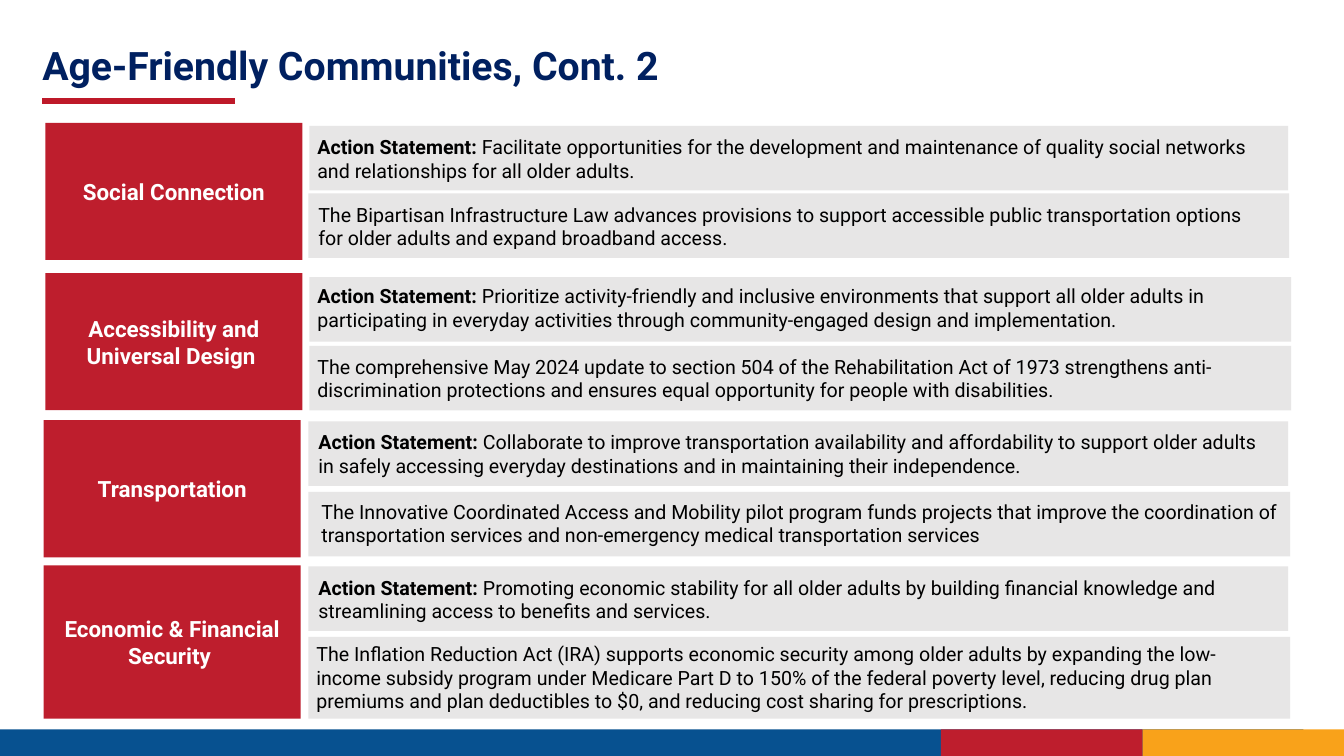
"""Build the Age-Friendly Communities slide of four topics with action statements."""
import pptx
import pptx.dml.color
import pptx.enum.shapes
import pptx.enum.text
import pptx.util
from lxml import etree

Pt = pptx.util.Pt
ALIGN = pptx.enum.text.PP_ALIGN
ANCHOR = pptx.enum.text.MSO_ANCHOR
COLORS = {
    "navy": "002060", "blue": "075190", "red": "BE1E2D", "rule": "BE1929",
    "gold": "F9A21A", "gray": "E7E6E6", "black": "000000", "white": "FFFFFF",
}
ACTION = "Action Statement: "
CARD_WIDTH = 183.6
STRIPES = [("blue", 0, 931), ("gold", 816, 144), ("red", 672, 144)]

# Each topic: label, card (left, top, height), then rows of
# (lead, text, panel box, text box).
TOPICS = [
    ("Social Connection", (32.4, 87.8, 97.9), [
        (ACTION, "Facilitate opportunities for the development and maintenance of quality "
         "social networks and relationships for all older adults. ",
         (221, 90, 699.1, 46.1), (219.6, 92.9, 689, 41)),
        ("", "The Bipartisan Infrastructure Law advances provisions to support accessible "
         "public transportation options for older adults and expand broadband access.",
         (220.3, 138.2, 700.6, 46.1), (220.3, 141.1, 684, 41)),
    ]),
    ("Accessibility and Universal Design ", (32.4, 195.1, 97.9), [
        (ACTION, "Prioritize activity-friendly and inclusive environments that support all "
         "older adults in participating in everyday activities through community-engaged "
         "design and implementation. ",
         (221, 198, 701.3, 46.1), (219.6, 199.4, 699.1, 41)),
        ("", "The comprehensive May 2024 update to section 504 of the Rehabilitation Act of "
         "1973 strengthens anti-discrimination protections and ensures equal opportunity "
         "for people with disabilities. ",
         (221, 247, 701.3, 46.1), (219.6, 249.8, 697, 41)),
    ]),
    ("Transportation", (31.2, 300.2, 97.9), [
        (ACTION, "Collaborate to improve transportation availability and affordability to "
         "support older adults in safely accessing everyday destinations and in "
         "maintaining their independence.",
         (220.3, 301, 699.8, 46.1), (220.3, 303.8, 697, 41)),
        ("", "The Innovative Coordinated Access and Mobility pilot program funds projects "
         "that improve the coordination of transportation services and non-emergency "
         "medical transportation services",
         (220.3, 351.4, 701.3, 46.1), (222.5, 353.5, 704.2, 41)),
    ]),
    ("Economic & Financial Security ", (31.2, 403.9, 109.4), [
        (ACTION, "Promoting economic stability for all older adults by building financial "
         "knowledge and streamlining access to benefits and services.",
         (220.3, 404.6, 699.8, 46.1), (220.3, 407.5, 697, 41)),
        ("", "The Inflation Reduction Act (IRA) supports economic security among older "
         "adults by expanding the low-income subsidy program under Medicare Part D to "
         "150% of the federal poverty level, reducing drug plan premiums and plan "
         "deductibles to $0, and reducing cost sharing for prescriptions.",
         (220.3, 455, 701.3, 58.3), (218.9, 455, 697.7, 58.3)),
    ]),
]


def color(name):
    return pptx.dml.color.RGBColor.from_string(COLORS[name])


def write(shape, text, lead="", size=14, bold=False, ink="black",
          align=ALIGN.LEFT, anchor=ANCHOR.TOP, line_spacing=None):
    frame = shape.text_frame
    frame.word_wrap = True
    frame.auto_size = pptx.enum.text.MSO_AUTO_SIZE.NONE
    frame.vertical_anchor = anchor
    paragraph = frame.paragraphs[0]
    paragraph.alignment = align
    paragraph.line_spacing = line_spacing
    for words, heavy in ((lead, True), (text, bold)):
        if words:
            run = paragraph.add_run()
            run.text = words
            run.font.name = "Roboto"
            run.font.size = Pt(size)
            run.font.bold = heavy
            run.font.color.rgb = color(ink)


def add_block(slide, box, fill):
    shape = slide.shapes.add_shape(
        pptx.enum.shapes.MSO_SHAPE.RECTANGLE, *map(Pt, box))
    shape.shadow.inherit = False
    shape.fill.solid()
    shape.fill.fore_color.rgb = color(fill)
    shape.line.fill.background()
    return shape


def add_title(slide, text):
    title = slide.shapes.title
    title.left, title.top, title.width, title.height = map(Pt, (23, 15.1, 864, 66.2))
    write(title, text, size=28, bold=True, ink="navy",
          anchor=ANCHOR.MIDDLE, line_spacing=0.9)


def add_rule(slide, left, right, top):
    rule = slide.shapes.add_connector(
        pptx.enum.shapes.MSO_CONNECTOR.STRAIGHT, Pt(left), Pt(top), Pt(right), Pt(top))
    rule.line.color.rgb = color("rule")
    rule.line.width = Pt(4.5)
    properties = rule._element.spPr
    etree.SubElement(properties, pptx.oxml.ns.qn("a:effectLst"))


def add_topic(slide, label, card, rows):
    left, top, height = card
    block = add_block(slide, (left, top, CARD_WIDTH, height), "red")
    write(block, label, size=16, bold=True, ink="white",
          align=ALIGN.CENTER, anchor=ANCHOR.MIDDLE)
    for lead, text, panel_box, text_box in rows:
        add_block(slide, panel_box, "gray")
        write(slide.shapes.add_textbox(*map(Pt, text_box)), text, lead=lead)


def main():
    presentation = pptx.Presentation()
    presentation.slide_width, presentation.slide_height = Pt(960), Pt(540)
    slide = presentation.slides.add_slide(presentation.slide_layouts[5])
    for fill, left, width in STRIPES:
        add_block(slide, (left, 521, width, 19), fill)
    add_title(slide, "Age-Friendly Communities, Cont. 2")
    add_rule(slide, 30.2, 167.8, 72)
    for topic in TOPICS:
        add_topic(slide, *topic)
    presentation.save("out.pptx")


if __name__ == "__main__":
    main()
